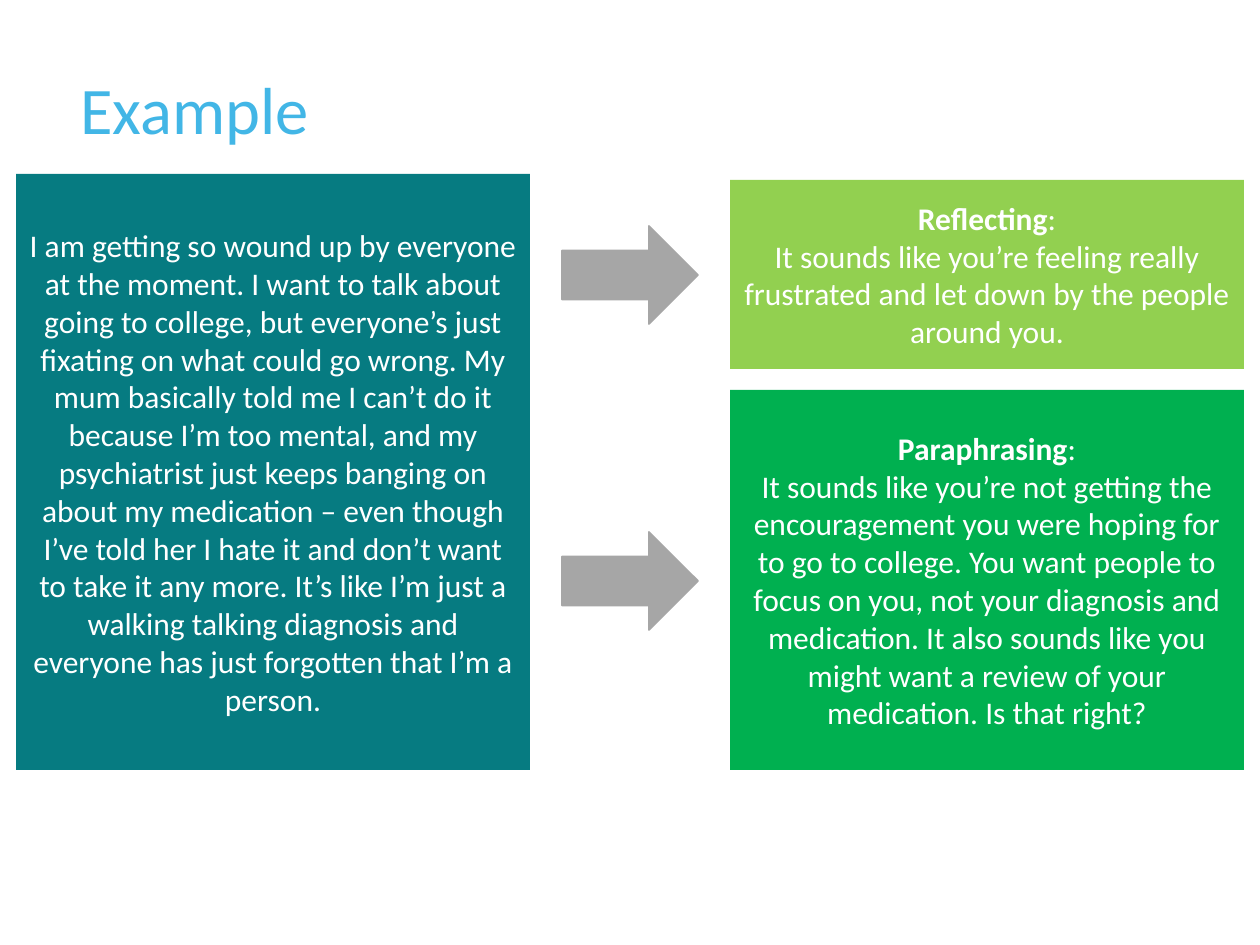
from pptx import Presentation
from pptx.dml.color import RGBColor
from pptx.enum.shapes import MSO_SHAPE
from pptx.enum.text import MSO_ANCHOR, PP_ALIGN
from pptx.util import Pt

PX = 914400 // 126
WHITE = RGBColor(0xFF, 0xFF, 0xFF)
SKY = RGBColor(0x42, 0xB6, 0xE6)
TEAL = RGBColor(0x06, 0x7B, 0x81)
LIME = RGBColor(0x92, 0xD0, 0x50)
GREEN = RGBColor(0x00, 0xB0, 0x50)
GREY = RGBColor(0xA6, 0xA6, 0xA6)

TITLE = "Example"
TITLE_BOX = (68, 71, 1142, 130)
BOX_WIDTH = 514
LEFT_X, RIGHT_X = 16, 730
BOTTOM = 770

# Left, top, bottom, fill, heading, body
BOXES = [
    (LEFT_X, 174, BOTTOM, TEAL, None,
     "I am getting so wound up by everyone at the moment. I want to talk about "
     "going to college, but everyone’s just fixating on what could go wrong. My "
     "mum basically told me I can’t do it because I’m too mental, and my "
     "psychiatrist just keeps banging on about my medication – even though I’ve "
     "told her I hate it and don’t want to take it any more. It’s like I’m just a "
     "walking talking diagnosis and everyone has just forgotten that I’m a person."),
    (RIGHT_X, 180, 369, LIME, "Reflecting",
     "It sounds like you’re feeling really frustrated and let down by the people "
     "around you."),
    (RIGHT_X, 390, BOTTOM, GREEN, "Paraphrasing",
     "It sounds like you’re not getting the encouragement you were hoping for to "
     "go to college. You want people to focus on you, not your diagnosis and "
     "medication. It also sounds like you might want a review of your medication. "
     "Is that right?"),
]
ARROW_WIDTH, ARROW_HEIGHT = 136, 98
ARROW_TOPS = (226, 532)


def px(*lengths):
    return [length * PX for length in lengths]


def add_run(paragraph, text, **font_values):
    run = paragraph.add_run()
    run.text = text
    color = font_values.pop("color")
    for name, value in {"name": "Calibri", **font_values}.items():
        setattr(run.font, name, value)
    run.font.color.rgb = color


def add_filled_shape(slide, kind, box, color):
    shape = slide.shapes.add_shape(kind, *px(*box))
    shape.shadow.inherit = False
    shape.fill.solid()
    shape.fill.fore_color.rgb = color
    shape.line.fill.background()
    return shape


def add_title(slide):
    frame = slide.shapes.add_textbox(*px(*TITLE_BOX)).text_frame
    frame.word_wrap = True
    paragraph = frame.paragraphs[0]
    paragraph.line_spacing = 0.9
    add_run(paragraph, TITLE, size=Pt(38), color=SKY)


def add_speech_box(slide, left, top, bottom, color, heading, body):
    box = (left, top, BOX_WIDTH, bottom - top)
    frame = add_filled_shape(slide, MSO_SHAPE.RECTANGLE, box, color).text_frame
    frame.word_wrap = True
    frame.vertical_anchor = MSO_ANCHOR.MIDDLE
    lines = [[(body, False)]]
    if heading:
        lines.insert(0, [(heading, True), (":", False)])
    for index, runs in enumerate(lines):
        paragraph = frame.add_paragraph() if index else frame.paragraphs[0]
        paragraph.alignment = PP_ALIGN.CENTER
        for text, bold in runs:
            add_run(paragraph, text, size=Pt(18), bold=bold, color=WHITE)


def add_arrow(slide, top):
    # Centred in the gap between the two columns
    left = (LEFT_X + BOX_WIDTH + RIGHT_X - ARROW_WIDTH) // 2
    box = (left, top, ARROW_WIDTH, ARROW_HEIGHT)
    arrow = add_filled_shape(slide, MSO_SHAPE.RIGHT_ARROW, box, GREY)
    arrow.line.color.rgb = GREY
    arrow.line.width = Pt(1)


def main():
    presentation = Presentation()
    presentation.slide_width, presentation.slide_height = px(1260, 945)
    slide = presentation.slides.add_slide(presentation.slide_layouts[6])
    add_title(slide)
    for box in BOXES:
        add_speech_box(slide, *box)
    for top in ARROW_TOPS:
        add_arrow(slide, top)
    presentation.save("out.pptx")


if __name__ == "__main__":
    main()
